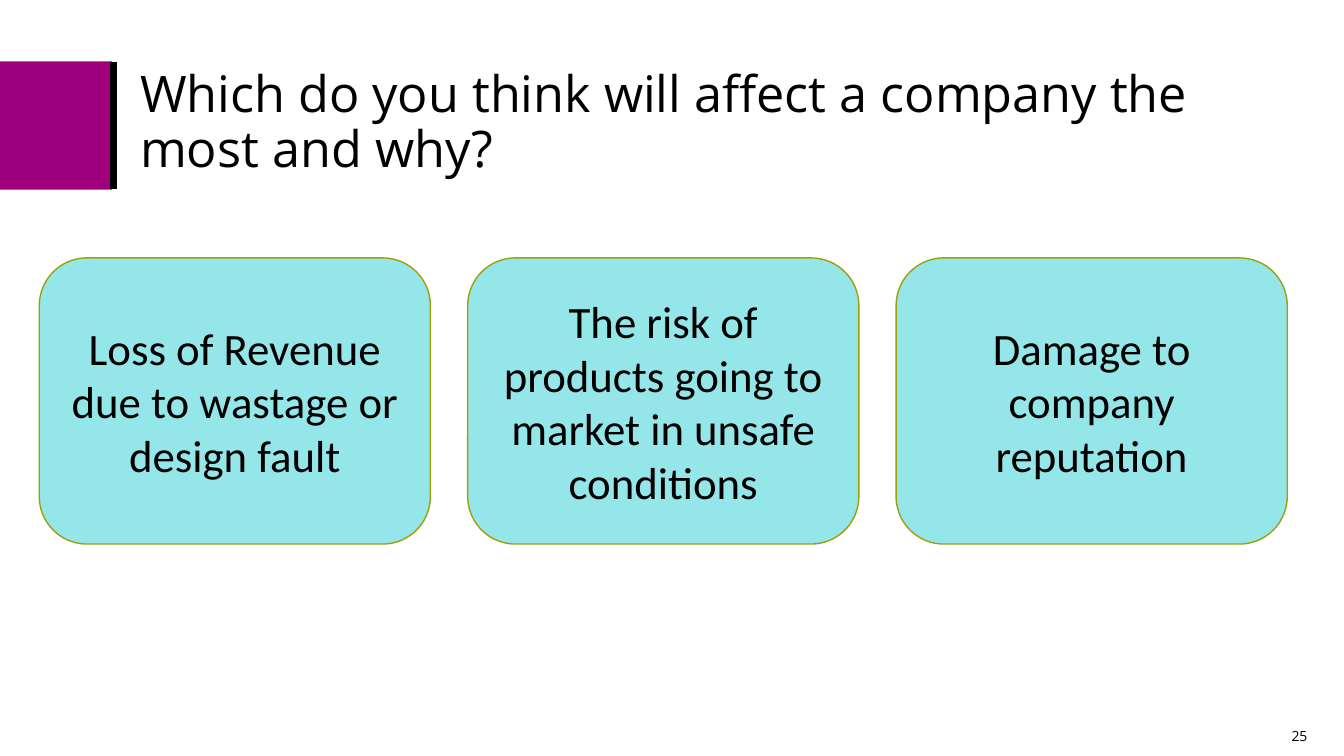
from dataclasses import dataclass

from lxml import etree
from pptx import Presentation
from pptx import util as u
from pptx.dml.color import RGBColor
from pptx.enum import shapes, text
from pptx.oxml.ns import qn


@dataclass(frozen=True)
class Theme:
    accent: RGBColor = RGBColor.from_string("9E007E")
    ink: RGBColor = RGBColor.from_string("000000")
    card_fill: RGBColor = RGBColor.from_string("94E6E9")
    card_line: RGBColor = RGBColor.from_string("9BA10A")
    heading_font: str = "Open Sans"
    card_font: str = "Calibri"
    title_size: int = 36
    card_size: int = 32
    number_size: int = 10


THEME = Theme()
TITLE = "Which do you think will affect a company the most and why?"
RISKS = (
    "Loss of Revenue due to wastage or design fault",
    "The risk of products going to market in unsafe conditions",
    "Damage to company reputation",
)


def write(shape, words, font, size, alignment):
    """Put one vertically centred paragraph into the shape and return it."""
    frame = shape.text_frame
    frame.word_wrap = True
    frame.vertical_anchor = text.MSO_ANCHOR.MIDDLE
    paragraph = frame.paragraphs[0]
    paragraph.alignment = alignment
    run = paragraph.add_run()
    run.text = words
    run.font.name = font
    run.font.size = u.Pt(size)
    run.font.color.rgb = THEME.ink
    return paragraph


def add_filled_shape(slide, kind, box, fill):
    shape = slide.shapes.add_shape(kind, *map(u.Cm, box))
    shape.shadow.inherit = False
    shape.fill.solid()
    shape.fill.fore_color.rgb = fill
    return shape


def add_header(slide, left, top, width, height):
    """Place the accent block, its black rule and the title."""
    block_width = 2.82
    rule_x = left + block_width + 0.05
    title_left = left + 3.28
    block = add_filled_shape(slide, shapes.MSO_SHAPE.RECTANGLE,
                             (left, top, block_width, height), THEME.accent)
    block.line.fill.background()

    rule = slide.shapes.add_connector(
        shapes.MSO_CONNECTOR.STRAIGHT,
        *map(u.Cm, (rule_x, top, rule_x, top + height - 0.03)))
    rule.line.color.rgb = THEME.ink
    rule.line.width = u.Pt(5)
    etree.SubElement(rule.element.spPr, qn("a:effectLst"))

    title = slide.shapes.add_textbox(
        *map(u.Cm, (title_left, top + 0.02, left + width - title_left, 3.1)))
    paragraph = write(title, TITLE, THEME.heading_font, THEME.title_size,
                      text.PP_ALIGN.LEFT)
    paragraph.line_spacing = 0.9


def add_risk_cards(slide, left, top, width, height, gap=0.94):
    """Share the width equally between the risk cards."""
    card_width = (width - gap * (len(RISKS) - 1)) / len(RISKS)
    for index, risk in enumerate(RISKS):
        box = (left + index * (card_width + gap), top, card_width, height)
        card = add_filled_shape(slide, shapes.MSO_SHAPE.ROUNDED_RECTANGLE,
                                box, THEME.card_fill)
        card.line.color.rgb = THEME.card_line
        card.line.width = u.Pt(1)
        write(card, risk, THEME.card_font, THEME.card_size,
              text.PP_ALIGN.CENTER)


def add_slide_number(slide, left, top, width, height):
    number = slide.shapes.add_textbox(*map(u.Cm, (left, top, width, height)))
    write(number, "25", THEME.heading_font, THEME.number_size,
          text.PP_ALIGN.RIGHT)


def main():
    presentation = Presentation()
    presentation.slide_width = u.Cm(33.87)
    presentation.slide_height = u.Cm(19.05)
    slide = presentation.slides.add_slide(presentation.slide_layouts[6])
    add_header(slide, 0, 1.55, 30.97, 3.23)
    add_slide_number(slide, 25.58, 18.03, 7.62, 1.02)
    add_risk_cards(slide, 0.99, 6.5, 31.45, 7.21)
    presentation.save("out.pptx")


if __name__ == "__main__":
    main()
